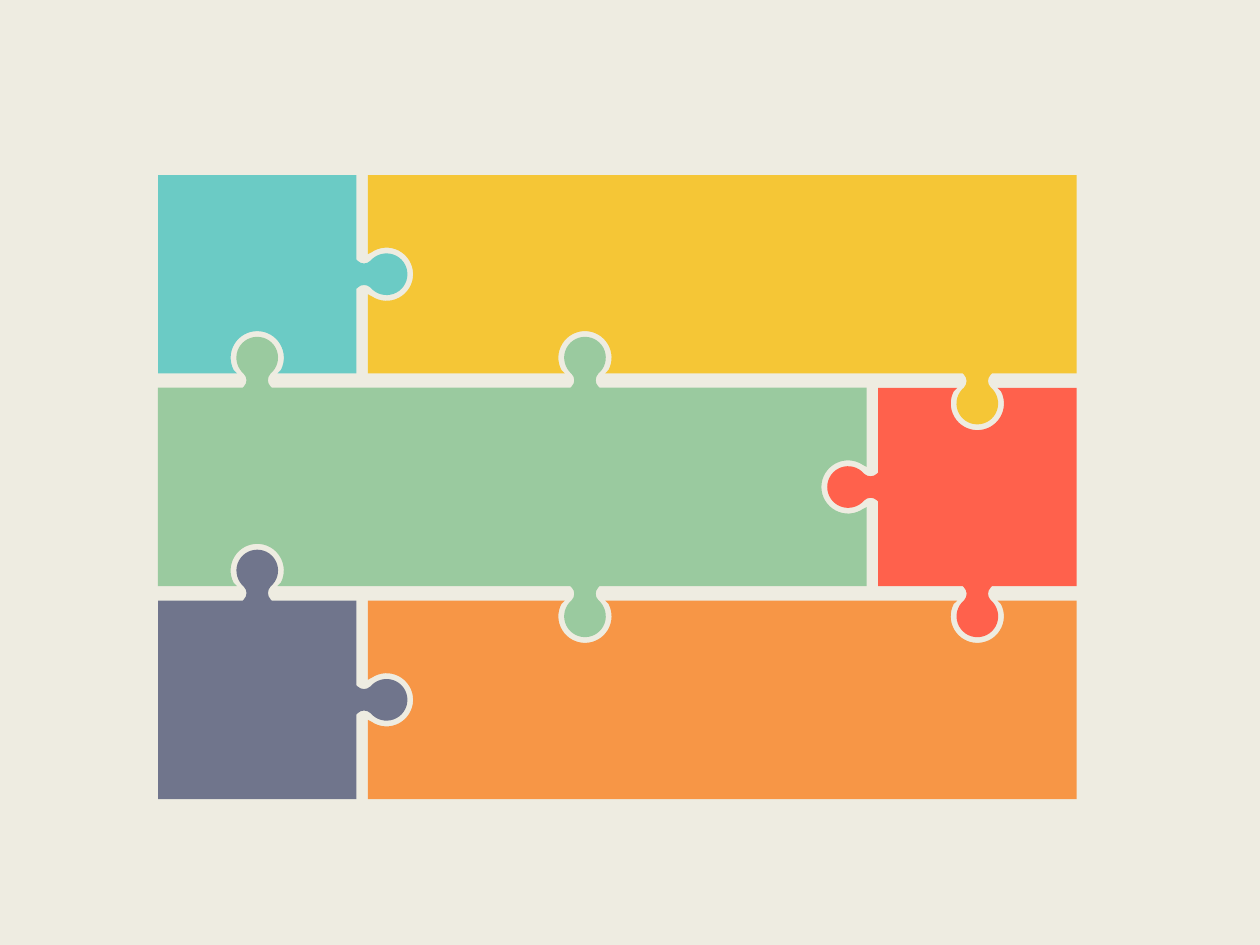
import math

import pptx
import pptx.dml.color
import pptx.oxml.ns
import pptx.util

Pt = pptx.util.Pt
RGBColor = pptx.dml.color.RGBColor
qn = pptx.oxml.ns.qn

CREAM = RGBColor(0xEE, 0xEC, 0xE1)
ORANGE = RGBColor(0xF7, 0x96, 0x46)
TEAL = RGBColor(0x6B, 0xCB, 0xC5)
YELLOW = RGBColor(0xF5, 0xC6, 0x36)
RED = RGBColor(0xFF, 0x61, 0x4C)
GREEN = RGBColor(0x9A, 0xCA, 0x9F)
SLATE = RGBColor(0x70, 0x75, 0x8C)

# Grid, in points
LEFT, TOP = 90.3, 100
SIDE, WIDE = 113.4, 404.9
COLUMN_GAP, ROW_GAP = 6.6, 8.2
RIGHT = LEFT + SIDE + COLUMN_GAP + WIDE
ROWS = [TOP + row * (SIDE + ROW_GAP) for row in range(3)]
MIDDLES = [row + SIDE / 2 for row in ROWS]

# Centres of the joints between rows
JOINT_LEFT, JOINT_MIDDLE, JOINT_RIGHT = LEFT + SIDE / 2, 334.3, RIGHT - SIDE / 2

# Knobs and the sockets around them, in points
REACH = 17.2
KNOB_RADIUS, SOCKET_RADIUS = 11.9, 15.2
NECK_RADIUS, NECK_CENTRE, NECK_HEIGHT = 5.07, 11.2, 4.3
KNOB_BASE, SOCKET_MOUTH, SOCKET_LIP = 8.3, 11.5, 2
QUARTER = math.pi / 4


def arc(centre, radius, start, end, count):
    """A start point, then Bezier triples; every point is (along, outward)."""
    sweep = (end - start) / count
    handle = 4 / 3 * math.tan(sweep / 4)

    def point(angle, pull=0):
        """Point on the circle, moved along its tangent by pull radii."""
        return (centre[0] + radius * (math.cos(angle) - pull * math.sin(angle)),
                centre[1] + radius * (math.sin(angle) + pull * math.cos(angle)))

    segments = [(point(start),)]
    for step in range(count):
        first = start + step * sweep
        last = first + sweep
        segments.append((point(first, handle), point(last, -handle), point(last)))
    return segments


def tab_profile(gap):
    half_neck = NECK_CENTRE - NECK_RADIUS * math.cos(QUARTER)
    opening = math.asin(half_neck / KNOB_RADIUS)
    rise = arc((-NECK_CENTRE, NECK_HEIGHT), NECK_RADIUS, -QUARTER, QUARTER, 1)
    knob = arc((0, REACH), KNOB_RADIUS, 1.5 * math.pi - opening, opening - math.pi / 2, 4)
    fall = arc((NECK_CENTRE, NECK_HEIGHT), NECK_RADIUS, 3 * QUARTER, 5 * QUARTER, 1)
    return [((-KNOB_BASE, 0),)] + rise + knob[1:] + fall[1:] + [((KNOB_BASE, 0),)]


def socket_profile(gap):
    depth = REACH - gap
    opening = math.acos((depth - SOCKET_LIP) / SOCKET_RADIUS)
    bowl = arc((0, -depth), SOCKET_RADIUS, math.pi / 2 + opening,
               2.5 * math.pi - opening, 4)
    return [((-SOCKET_MOUTH, 0),)] + bowl + [((SOCKET_MOUTH, 0),)]


class Puzzle:
    """Holds the page and draws its pieces."""

    def __init__(self, deck, background):
        self.page = deck.slides.add_slide(deck.slide_layouts[6])
        self.page.background.fill.solid()
        self.page.background.fill.fore_color.rgb = background

    def edge(self, start, direction, joints):
        """Segments of one side, walked clockwise from its start corner."""
        step_x, step_y = direction
        axis, gap = (0, ROW_GAP) if step_x else (1, COLUMN_GAP)
        segments = [(start,)]
        for profile, centre in sorted(joints, key=lambda joint: joint[1] * direction[axis]):
            x, y = (centre, start[1]) if axis == 0 else (start[0], centre)
            for segment in profile(gap):
                segments.append(tuple((x + along * step_x + outward * step_y,
                                       y + along * step_y - outward * step_x)
                                      for along, outward in segment))
        return segments

    def freeform(self, segments):
        """Draw lines through all points, then join each triple into a curve."""
        points = [(Pt(x), Pt(y)) for segment in segments for x, y in segment]
        builder = self.page.shapes.build_freeform(*points[0])
        builder.add_line_segments(points[1:], close=True)
        shape = builder.convert_to_shape()
        outline = next(shape.element.iter(qn("a:path")))
        lines = iter(outline.findall(qn("a:lnTo")))
        for segment in segments[1:]:
            first, *others = [next(lines) for _ in segment]
            for other in others:
                first.append(other[0])
                outline.remove(other)
            if others:
                first.tag = qn("a:cubicBezTo")
        return shape

    def piece(self, color, left, top, width, up=(), right=(), down=(), back=()):
        """Draw a piece; each side lists its joints as (profile, centre)."""
        far, bottom = left + width, top + SIDE
        shape = self.freeform(self.edge((left, top), (1, 0), up)
                              + self.edge((far, top), (0, 1), right)
                              + self.edge((far, bottom), (-1, 0), down)
                              + self.edge((left, bottom), (0, -1), back))
        shape.shadow.inherit = False
        shape.fill.solid()
        shape.fill.fore_color.rgb = color
        shape.line.fill.background()


def main():
    deck = pptx.Presentation()
    deck.slide_width, deck.slide_height = Pt(720), Pt(540)
    puzzle = Puzzle(deck, CREAM)
    tab, socket = tab_profile, socket_profile
    second_column = LEFT + SIDE + COLUMN_GAP

    puzzle.piece(ORANGE, second_column, ROWS[2], WIDE,
                 up=[(socket, JOINT_MIDDLE), (socket, JOINT_RIGHT)],
                 back=[(socket, MIDDLES[2])])
    puzzle.piece(TEAL, LEFT, ROWS[0], SIDE,
                 right=[(tab, MIDDLES[0])], down=[(socket, JOINT_LEFT)])
    puzzle.piece(YELLOW, second_column, ROWS[0], WIDE,
                 down=[(socket, JOINT_MIDDLE), (tab, JOINT_RIGHT)],
                 back=[(socket, MIDDLES[0])])
    puzzle.piece(RED, RIGHT - SIDE, ROWS[1], SIDE,
                 up=[(socket, JOINT_RIGHT)], down=[(tab, JOINT_RIGHT)],
                 back=[(tab, MIDDLES[1])])
    puzzle.piece(GREEN, LEFT, ROWS[1], WIDE,
                 up=[(tab, JOINT_LEFT), (tab, JOINT_MIDDLE)],
                 right=[(socket, MIDDLES[1])],
                 down=[(socket, JOINT_LEFT), (tab, JOINT_MIDDLE)])
    puzzle.piece(SLATE, LEFT, ROWS[2], SIDE,
                 up=[(tab, JOINT_LEFT)], right=[(tab, MIDDLES[2])])
    deck.save("out.pptx")


if __name__ == "__main__":
    main()
